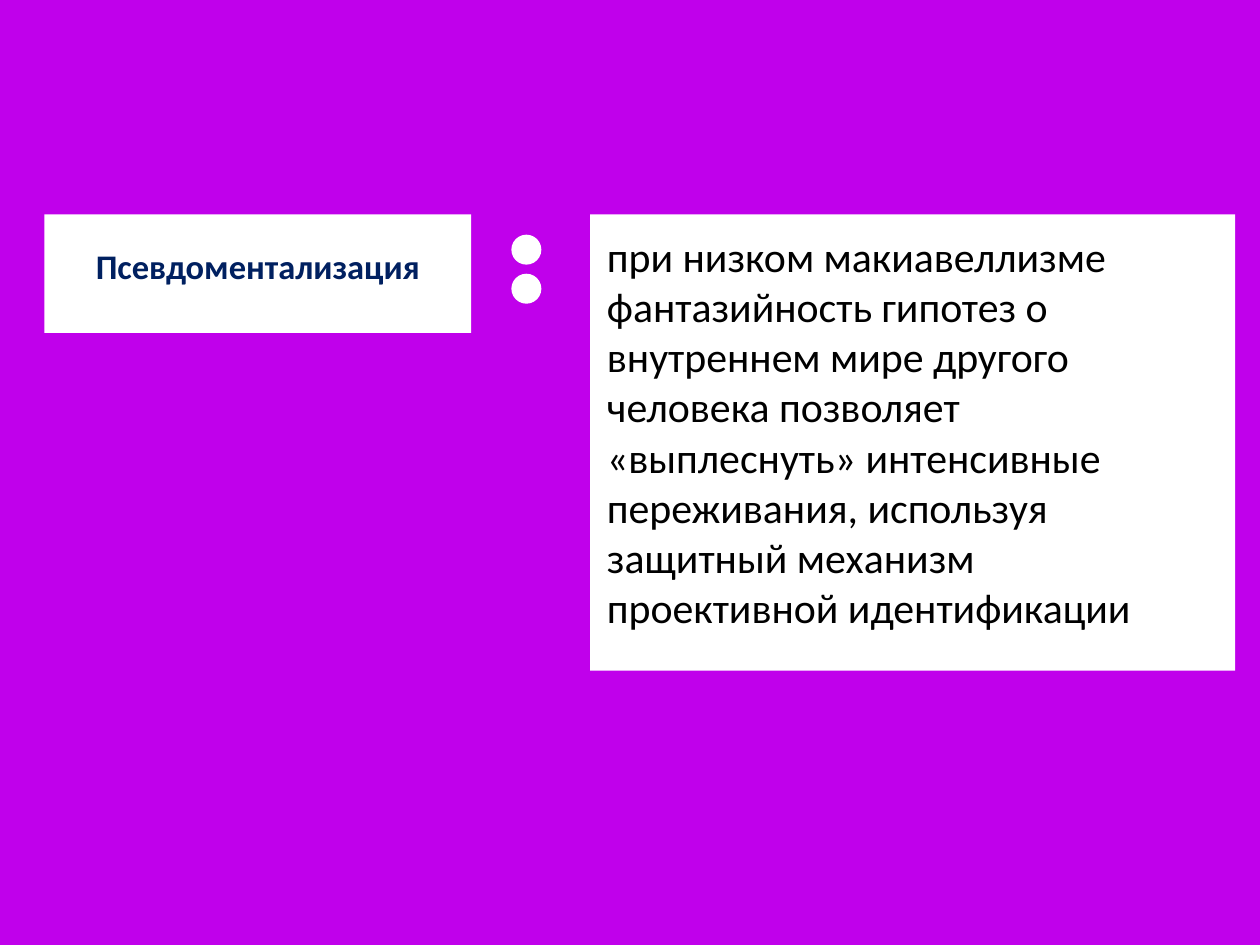
from pptx import Presentation
from pptx.dml.color import RGBColor
from pptx.enum.shapes import MSO_SHAPE
from pptx.enum.text import MSO_ANCHOR, MSO_AUTO_SIZE, PP_ALIGN
from pptx.oxml.xmlchemy import OxmlElement
from pptx.util import Cm, Pt


def paint(fill, color):
    fill.solid()
    fill.fore_color.rgb = RGBColor.from_string(color)


def add_card(sp, box, text, margins, size, color, bold, align):
    sp.left, sp.top, sp.width, sp.height = [Cm(v) for v in box]
    paint(sp.fill, "FFFFFF")
    tf = sp.text_frame
    tf.text = text
    tf.word_wrap = True
    tf.auto_size = MSO_AUTO_SIZE.NONE
    tf.vertical_anchor = MSO_ANCHOR.TOP
    tf.margin_left, tf.margin_top, tf.margin_right, tf.margin_bottom = [Cm(v) for v in margins]
    p = tf.paragraphs[0]
    p.alignment = align
    p.space_before = Pt(0)
    pPr = p._p.get_or_add_pPr()
    pPr.set("marL", "0")
    pPr.set("indent", "0")
    pPr.append(OxmlElement("a:buNone"))
    font = p.runs[0].font
    font.name, font.size, font.bold = "Calibri", Pt(size), bold
    font.color.rgb = RGBColor.from_string(color)


def add_colon(s, box):
    left, top, width, height = box
    for y in (top, top + height - width):
        sp = s.shapes.add_shape(MSO_SHAPE.OVAL, Cm(left), Cm(y), Cm(width), Cm(width))
        sp.shadow.inherit = False
        paint(sp.fill, "FFFFFF")
        sp.line.fill.background()


def main():
    prs = Presentation()
    prs.slide_width, prs.slide_height = Cm(36.12), Cm(27.1)
    s = prs.slides.add_slide(prs.slide_layouts[1])
    paint(s.background.fill, "C000EB")
    top = 6.15
    add_card(s.shapes.title, (1.27, top, 12.24, 3.4), "Псевдоментализация",
             (0.6, 0.89, 0.6, 0.2), 28, "002060", True, PP_ALIGN.CENTER)
    add_colon(s, (14.66, top + 0.58, 0.86, 1.98))
    add_card(s.placeholders[1], (16.92, top, 18.49, 13.08),
             "при низком макиавеллизме фантазийность гипотез о внутреннем мире "
             "другого человека позволяет «выплеснуть» интенсивные переживания, "
             "используя защитный механизм проективной идентификации",
             (0.48, 0.46, 1.85, 0.2), 34, "000000", False, PP_ALIGN.LEFT)
    prs.save("out.pptx")


if __name__ == "__main__":
    main()
